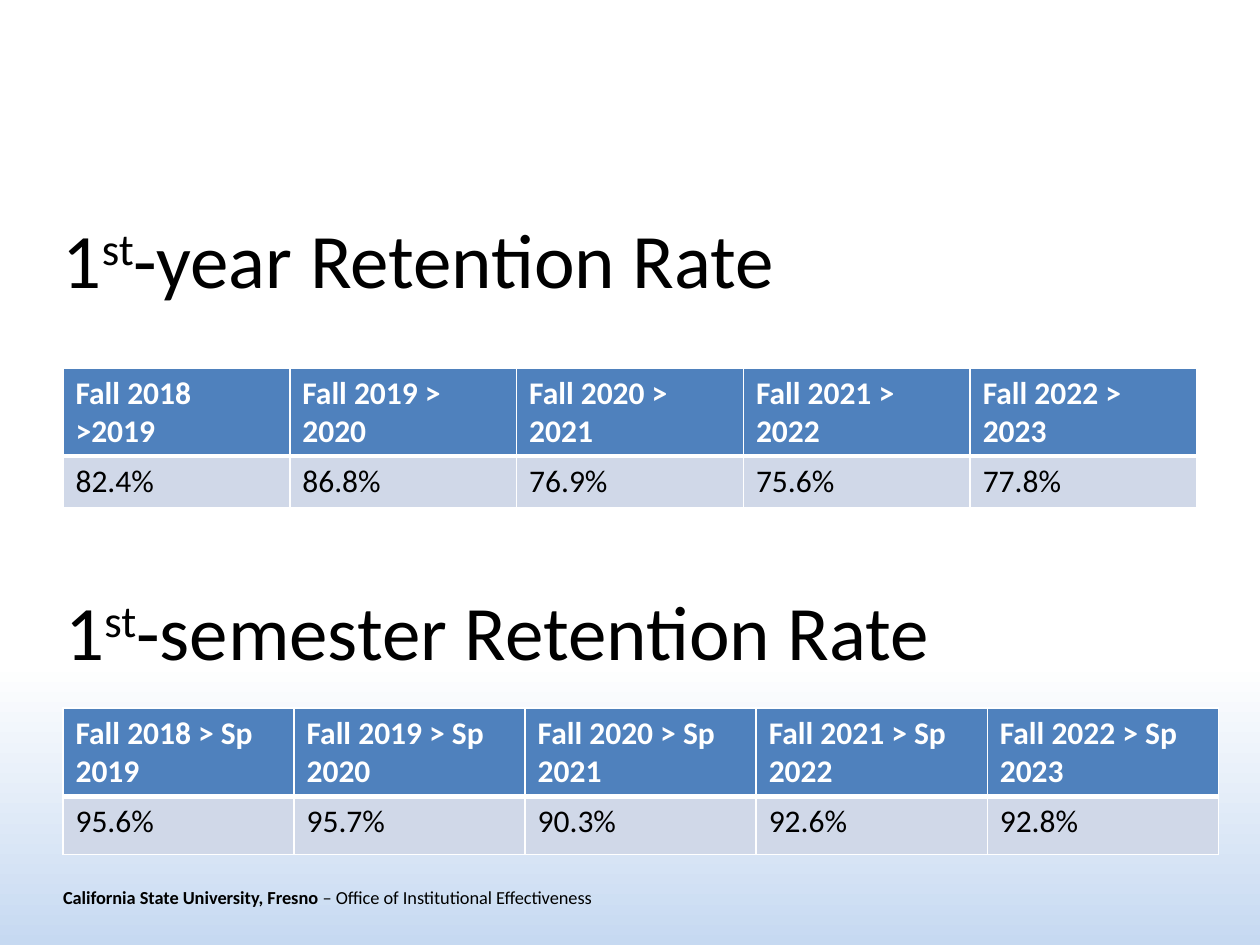
from lxml import etree
from pptx import Presentation
from pptx.dml.color import RGBColor
from pptx.enum.text import MSO_ANCHOR
from pptx.oxml.ns import qn
from pptx.util import Inches, Pt

rgb = RGBColor.from_string


def add_text(box, pieces, size, inset, anchor):
    """Write (text, bold, baseline) pieces as one paragraph on the slide."""
    frame = slide.shapes.add_textbox(*[Inches(v) for v in box]).text_frame
    frame.word_wrap = True
    frame.vertical_anchor = anchor
    frame.margin_left = frame.margin_right = Inches(inset)
    paragraph = frame.paragraphs[0]
    paragraph.font.name = "Calibri"
    paragraph.font.size = Pt(size)
    paragraph.font.color.rgb = rgb("000000")
    for text, bold, baseline in pieces:
        run = paragraph.add_run()
        run.text = text
        run.font.bold = bold
        if baseline:
            run._r.get_or_add_rPr().set("baseline", baseline)


def add_border(cell, side, points):
    line = etree.SubElement(cell._tc.get_or_add_tcPr(), qn(f"a:ln{side}"), w=str(Pt(points)))
    fill = etree.SubElement(line, qn("a:solidFill"))
    etree.SubElement(fill, qn("a:srgbClr"), val="FFFFFF")


prs = Presentation()
prs.slide_width = Inches(10)
prs.slide_height = Inches(7.5)
slide = prs.slides.add_slide(prs.slide_layouts[6])

background = slide.background.fill
background.gradient()
background.gradient_angle = 270
for stop, (position, color) in zip(background.gradient_stops, [(0.7, "FFFFFF"), (1, "C6D9F1")]):
    stop.position = position
    stop.color.rgb = rgb(color)

add_text((0.5, 6.92, 5.75, 0.4),
         [("California State University, Fresno ", True, None),
          ("– Office of Institutional Effectiveness", False, None)],
         10.5, 0, MSO_ANCHOR.MIDDLE)

headings = [
    ("year", (0.5, 1.42, 9, 1.25), 0, MSO_ANCHOR.MIDDLE),
    ("semester", (0.42, 4.58, 7.83, 0.84), 0.1, MSO_ANCHOR.TOP),
]
for period, box, inset, anchor in headings:
    add_text(box, [("1", False, None), ("st", False, "30000"),
                   (f"-{period} Retention Rate", False, None)], 44, inset, anchor)

# top, width, rate row height, {period: rate}
retention_tables = [
    (2.92, 9, 0.41, {
        "Fall 2018 >2019": "82.4%",
        "Fall 2019 > 2020": "86.8%",
        "Fall 2020 > 2021": "76.9%",
        "Fall 2021 > 2022": "75.6%",
        "Fall 2022 > 2023": "77.8%",
    }),
    (5.62, 9.17, 0.46, {
        "Fall 2018 > Sp 2019": "95.6%",
        "Fall 2019 > Sp 2020": "95.7%",
        "Fall 2020 > Sp 2021": "90.3%",
        "Fall 2021 > Sp 2022": "92.6%",
        "Fall 2022 > Sp 2023": "92.8%",
    }),
]
# fill, text colour, bold, top border, bottom border
row_styles = [("4F81BD", "FFFFFF", True, 1, 3), ("D0D8E8", "000000", False, 3, 1)]
header_height = 0.7

for top, width, rate_height, rates in retention_tables:
    table = slide.shapes.add_table(2, len(rates), Inches(0.5), Inches(top), Inches(width),
                                   Inches(header_height + rate_height)).table
    table.rows[0].height = Inches(header_height)
    table.rows[1].height = Inches(rate_height)
    for r, (texts, style) in enumerate(zip((rates.keys(), rates.values()), row_styles)):
        fill, color, bold, above, below = style
        for c, text in enumerate(texts):
            cell = table.cell(r, c)
            for side, points in zip("LRTB", (1, 1, above, below)):
                add_border(cell, side, points)
            cell.fill.solid()
            cell.fill.fore_color.rgb = rgb(fill)
            cell.text = text
            font = cell.text_frame.paragraphs[0].font
            font.name = "Calibri"
            font.size = Pt(18)
            font.bold = bold
            font.color.rgb = rgb(color)

prs.save("out.pptx")
